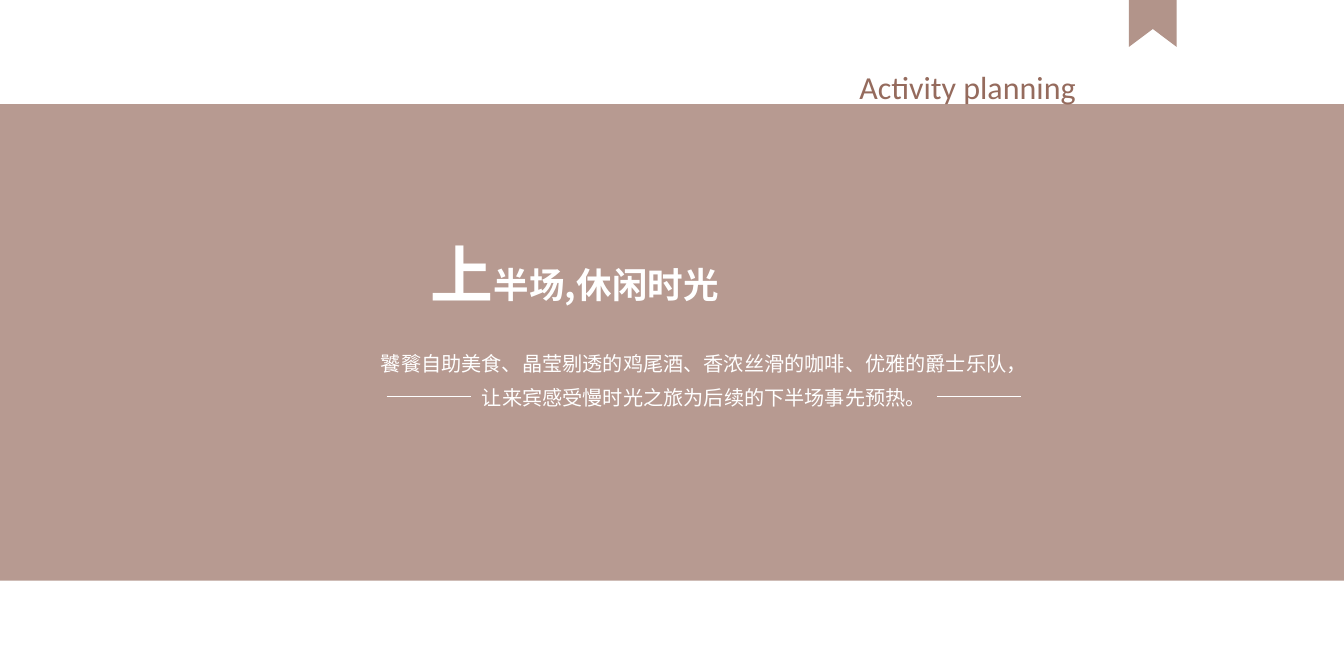
from pptx import Presentation, util as u
from pptx.dml.color import RGBColor
from pptx.enum import shapes, text
from pptx.oxml.ns import qn
from lxml import etree

HUES = {"rose": "956B5D", "white": "FFFFFF"}
SANS = "Noto Sans CJK JP"
ALIGN = text.PP_ALIGN


class Page:
    def __init__(self, deck):
        self.slide = deck.slides.add_slide(deck.slide_layouts[6])
        self.items = self.slide.shapes
        back = self.slide.background.fill
        back.solid()
        back.fore_color.rgb = self.hue("white")

    def hue(self, name):
        return RGBColor.from_string(HUES[name])

    def paint(self, shape, name, alpha):
        shape.shadow.inherit = False
        shape.line.fill.background()
        shape.fill.solid()
        shape.fill.fore_color.rgb = self.hue(name)
        color = shape._element.spPr.find(qn("a:solidFill"))[0]
        etree.SubElement(color, qn("a:alpha"), val=str(alpha * 1000))

    def band(self, box, name, alpha):
        shape = self.items.add_shape(
            shapes.MSO_SHAPE.RECTANGLE, *map(u.Inches, box))
        self.paint(shape, name, alpha)

    def outline(self, points, name, alpha):
        first, *rest = [(u.Inches(x), u.Inches(y)) for x, y in points]
        path = self.items.build_freeform(*first)
        path.add_line_segments(rest, close=True)
        self.paint(path.convert_to_shape(), name, alpha)

    def rule(self, left, right, y, name):
        line = self.items.add_connector(
            shapes.MSO_CONNECTOR.STRAIGHT,
            *map(u.Inches, (left, y, right, y)))
        line.line.color.rgb = self.hue(name)
        line.line.width = u.Pt(0.75)
        etree.SubElement(line._element.spPr, qn("a:effectLst"))

    def words(self, box, lines, face, name, align, bold=False, pitch=None):
        frame = self.items.add_textbox(*map(u.Inches, box)).text_frame
        frame.word_wrap = True
        frame.auto_size = text.MSO_AUTO_SIZE.SHAPE_TO_FIT_TEXT
        frame.margin_left = frame.margin_right = u.Inches(0.15)
        frame.margin_top = frame.margin_bottom = u.Inches(0.08)
        for i, runs in enumerate(lines):
            para = frame.add_paragraph() if i else frame.paragraphs[0]
            para.alignment = align
            if pitch:
                para.line_spacing = u.Pt(pitch)
            for copy, size in runs:
                run = para.add_run()
                run.text = copy
                font = run.font
                font.name, font.size, font.bold = face, u.Pt(size), bold
                font.color.rgb = self.hue(name)
                latin = run._r.rPr.find(qn("a:latin"))
                latin.addnext(etree.Element(qn("a:ea"), typeface=face))


def main():
    deck = Presentation()
    deck.slide_width = u.Inches(15.75)
    deck.slide_height = u.Inches(7.88)
    page = Page(deck)

    page.band((0, 1.22, 15.75, 5.59), "rose", 68)
    page.words((4.9, 2.68, 6.15, 1.04),
               [[("上", 53), ("半场,休闲时光", 30)]],
               SANS, "white", ALIGN.JUSTIFY, bold=True)
    page.words((3.45, 3.92, 9.6, 0.97),
               [[("饕餮自助美食、晶莹剔透的鸡尾酒、香浓丝滑的咖啡、优雅的爵士乐队，", 17)],
                [("让来宾感受慢时光之旅为后续的下半场事先预热。", 17)]],
               SANS, "white", ALIGN.CENTER, pitch=28.8)
    for left in (10.98, 4.53):
        page.rule(left, left + 0.99, 4.65, "white")
    page.words((9.92, 0.71, 5.39, 0.61), [[("Activity planning", 27)]],
               "Calibri", "rose", ALIGN.JUSTIFY)
    page.outline([(13.23, 0), (13.79, 0), (13.79, 0.55),
                  (13.51, 0.34), (13.23, 0.55)], "rose", 72)

    deck.save("out.pptx")


if __name__ == "__main__":
    main()
